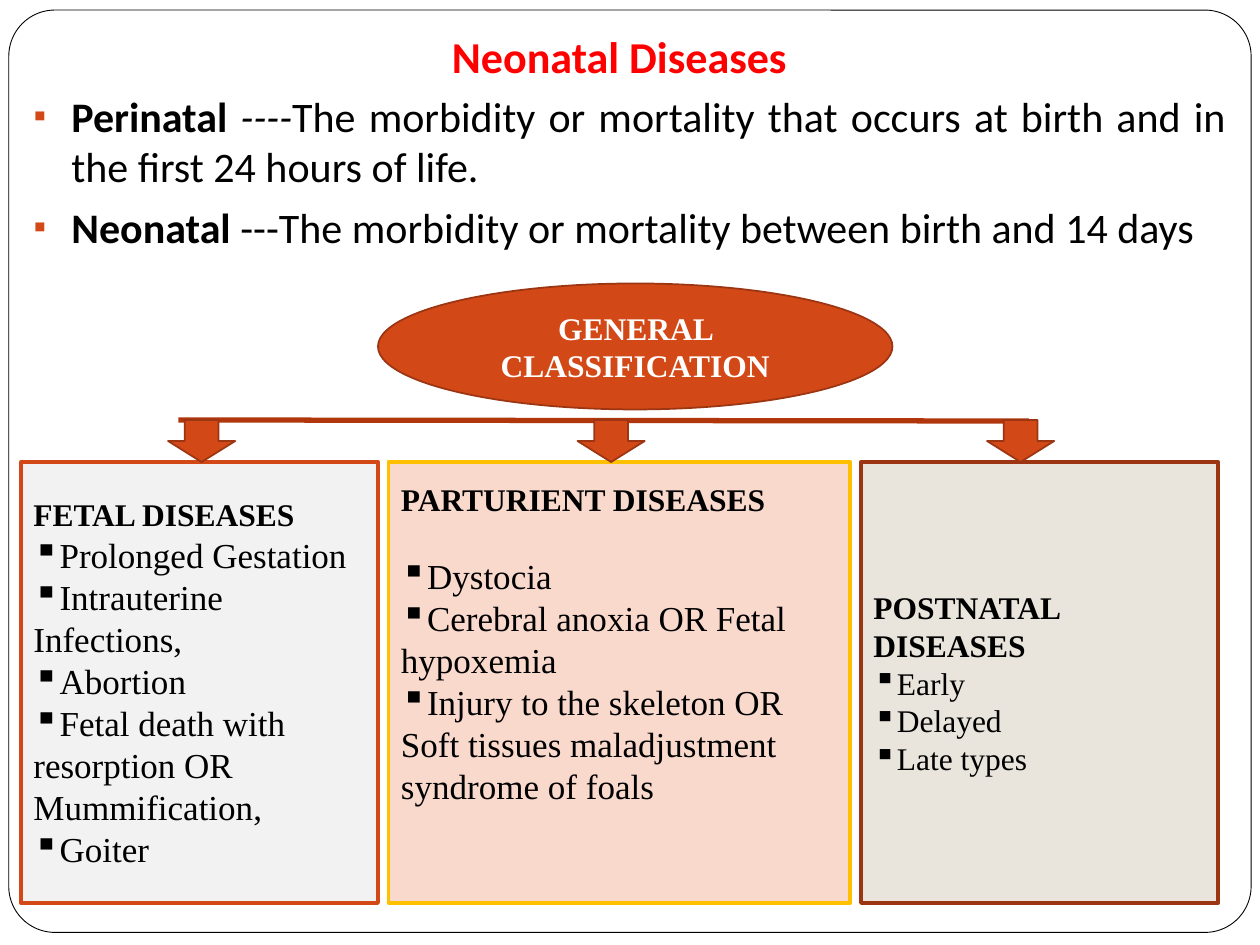
from pptx import Presentation
from pptx.dml.color import RGBColor
from pptx.enum.shapes import MSO_CONNECTOR as Conn, MSO_SHAPE as Form
from pptx.enum.text import MSO_ANCHOR as Anchor, MSO_AUTO_SIZE as Fit, PP_ALIGN as Align
from pptx.oxml.ns import qn
from pptx.util import Inches, Pt
from lxml.etree import SubElement

TITLE = "Neonatal Diseases"
TERMS = [
    ("Perinatal", " ----", "The morbidity or mortality that occurs at birth and in the first 24 hours of life. "),
    ("Neonatal", "", " ---The morbidity or mortality between birth and 14 days"),
]
ROOT = "GENERAL CLASSIFICATION"
GROUPS = [
    dict(head="FETAL DISEASES", wide=34, size=20, fill="F2F2F2", line="D34817", gap=0, foot=0.05,
         items=["Prolonged Gestation", "Intrauterine Infections,", "Abortion",
                "Fetal death with resorption OR Mummification,", "Goiter"]),
    dict(head="PARTURIENT DISEASES", wide=44, size=20, fill="FAD9CD", line="FFC000", gap=21, foot=0.67,
         items=["Dystocia", "Cerebral anoxia OR Fetal hypoxemia",
                "Injury to the skeleton OR Soft tissues maladjustment syndrome of foals"]),
    dict(head="POSTNATAL DISEASES", wide=34, size=18, fill="E9E5DC", line="9C3511", gap=0, foot=0.05,
         items=["Early", "Delayed", "Late types"]),
]
THEME = dict(sans="Calibri", serif="Times New Roman", red="FF0000", black="000000", white="FFFFFF",
             main="D34817", edge="9C3511", rail="B1360B", title=25.2, body=24, label=18)
COLS, ROWS = 120, 90

deck = Presentation()
deck.slide_width, deck.slide_height = Inches(10), Inches(7.5)
slide = deck.slides.add_slide(deck.slide_layouts[1])


def grid(x, y, w, h):
    dx, dy = deck.slide_width / COLS, deck.slide_height / ROWS
    return [round(v) for v in (x * dx, y * dy, w * dx, h * dy)]


def color(code):
    return RGBColor.from_string(code)


def style(run, face, size, tint, bold=False, slant=False):
    font = run.font
    font.name, font.size, font.bold, font.italic = face, Pt(size), bold, slant
    font.color.rgb = color(tint)


def bullet(para, indent=0, tint=None, share=None):
    props = para._p.get_or_add_pPr()
    props.set("marL", str(Inches(indent)))
    props.set("indent", str(-Inches(indent)))
    if tint:
        SubElement(SubElement(props, qn("a:buClr")), qn("a:srgbClr"), val=tint)
    if share:
        SubElement(props, qn("a:buSzPct"), val=str(share * 1000))
    SubElement(props, qn("a:buChar"), char="▪")


def draw(form, box, fill, line, width):
    shape = slide.shapes.add_shape(form, *box)
    shape.shadow.inherit = False
    if fill:
        shape.fill.solid()
        shape.fill.fore_color.rgb = color(fill)
    else:
        shape.fill.background()
    shape.line.color.rgb = color(line)
    shape.line.width = Pt(width)
    return shape


def place(holder, box, anchor):
    holder.left, holder.top, holder.width, holder.height = box
    frame = holder.text_frame
    frame.auto_size, frame.vertical_anchor, frame.word_wrap = Fit.NONE, anchor, True
    return frame


frame = place(slide.shapes.title, grid(2, 2, 114, 7), Anchor.BOTTOM)
frame.margin_bottom = Inches(0.1)
frame.text = TITLE
frame.paragraphs[0].alignment = Align.CENTER
style(frame.paragraphs[0].runs[0], THEME["sans"], THEME["title"], THEME["red"], bold=True)

frame = place(slide.placeholders[1], grid(2, 8, 116, 80), Anchor.TOP)
for i, (term, dash, text) in enumerate(TERMS):
    para = frame.add_paragraph() if i else frame.paragraphs[0]
    para.alignment = Align.JUSTIFY
    para.space_before = Pt(5.8 if i else 0)
    bullet(para, 0.3, THEME["main"], 85)
    for words, bold, slant in ((term, True, False), (dash, False, True), (text, False, False)):
        if words:
            run = para.add_run()
            run.text = words
            style(run, THEME["sans"], THEME["body"], THEME["black"], bold, slant)

border = draw(Form.ROUNDED_RECTANGLE, grid(0.84, 0.96, 118.32, 87.84), None, THEME["black"], 0.5)
border.adjustments[0] = 0.05

root = draw(Form.OVAL, grid(36, 27, 49, 12), THEME["main"], THEME["edge"], 1)
root.text_frame.text = ROOT
root.text_frame.word_wrap = True
para = root.text_frame.paragraphs[0]
para.alignment = Align.CENTER
style(para.runs[0], THEME["serif"], THEME["label"], THEME["white"], bold=True)

left = 2
for group in GROUPS:
    card = draw(Form.RECTANGLE, grid(left, 44, group["wide"], 42), group["fill"], group["line"], 2.25)
    left += group["wide"] + 1
    frame = card.text_frame
    frame.word_wrap, frame.vertical_anchor = True, Anchor.MIDDLE
    frame.margin_bottom = Inches(group["foot"])
    frame.text = "\n".join([group["head"], *group["items"]])
    for i, para in enumerate(frame.paragraphs):
        para.alignment = Align.LEFT
        if i:
            bullet(para)
        else:
            para.space_after = Pt(group["gap"])
        size = group["size"] if i else THEME["label"]
        style(para.runs[0], THEME["serif"], size, THEME["black"], bold=not i)

x, y, w, h = grid(17, 40, 81, 0.1)
rail = slide.shapes.add_connector(Conn.STRAIGHT, x, y, x + w, y + h)
rail.line.color.rgb = color(THEME["rail"])
rail.line.width = Pt(3)
SubElement(rail._element.spPr, qn("a:effectLst"))

for i in range(len(GROUPS)):
    draw(Form.DOWN_ARROW, grid(16 + 39 * i, 40, 6.4, 4), THEME["main"], THEME["edge"], 1)

deck.save("out.pptx")
